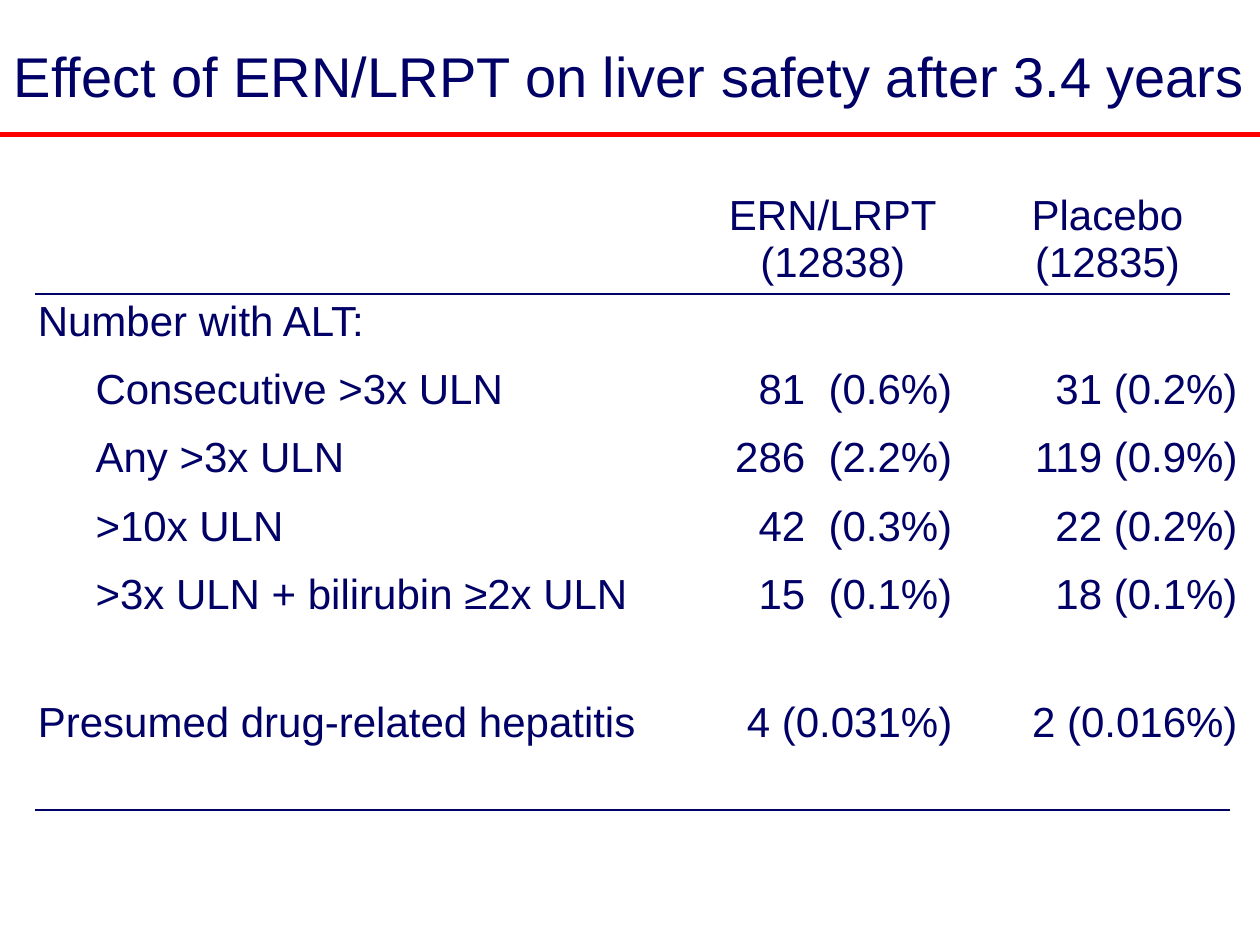
from dataclasses import dataclass

from lxml import etree
from pptx import Presentation
from pptx import util as u
from pptx.dml.color import RGBColor
from pptx.enum import shapes, text
from pptx.oxml.ns import qn

Pt = u.Pt
FONT = "Arial"
INK = {"navy": "000066", "red": "FF0000"}
LEFT, MID, RIGHT = text.PP_ALIGN.LEFT, text.PP_ALIGN.CENTER, text.PP_ALIGN.RIGHT
PAD, STEP = 7.2, 33


@dataclass
class Row:
    label: str = ""
    drug: str = ""
    sham: str = ""
    high: float = 39
    deep: bool = False


@dataclass
class Rule:
    left: float
    right: float
    top: float
    tint: str
    wide: float


ROWS = [
    Row("", "ERN/LRPT\n(12838)", "Placebo\n(12835)", 62.6),
    Row("Number with ALT:"),
    Row("Consecutive >3x ULN", "81  (0.6%)", "31 (0.2%)", deep=True),
    Row("Any >3x ULN", "286  (2.2%)", "119 (0.9%)", deep=True),
    Row(">10x ULN", "42  (0.3%)", "22 (0.2%)", deep=True),
    Row(">3x ULN + bilirubin ≥2x ULN", "15  (0.1%)", "18 (0.1%)", deep=True),
    Row(high=34),
    Row("Presumed drug-related hepatitis", "4 (0.031%)", "2 (0.016%)", 34),
    Row(high=29),
]
COLS = [368, 18, 113, 38, 163]
RULES = [
    Rule(0, 720, 77, "red", 3),
    Rule(20, 703, 168, "navy", 1),
    Rule(20, 703, 463, "navy", 1),
]


def style(frame, size: float, align) -> None:
    for para in frame.paragraphs:
        para.alignment = align
        for run in para.runs:
            font = run.font
            font.name, font.size, font.bold = FONT, Pt(size), False
            font.color.rgb = RGBColor.from_string(INK["navy"])


def add_title(slide, words: str) -> None:
    title = slide.shapes.title
    title.left, title.top = Pt(0), Pt(-2)
    title.width, title.height = Pt(720), Pt(90)
    frame = title.text_frame
    frame.text = words
    frame.auto_size = text.MSO_AUTO_SIZE.NONE
    frame.vertical_anchor = text.MSO_ANCHOR.MIDDLE
    style(frame, 32, MID)


def add_grid(slide, rows: list[Row]) -> None:
    high = sum(row.high for row in rows)
    grid = slide.shapes.add_table(
        len(rows), len(COLS), Pt(14.4), Pt(104.4), Pt(sum(COLS)), Pt(high)
    ).table
    grid.first_row = grid.horz_banding = False
    for col, wide in zip(grid.columns, COLS):
        col.width = Pt(wide)

    for i, row in enumerate(rows):
        grid.rows[i].height = Pt(row.high)
        for cell in grid.rows[i].cells:
            cell.fill.background()
        # The drug figures span two columns, except in the closing row
        if i < len(rows) - 1:
            grid.cell(i, 2).merge(grid.cell(i, 3))
        side = RIGHT if i else MID
        for j, words, align in (
            (0, row.label, LEFT), (2, row.drug, side), (4, row.sham, side)
        ):
            cell = grid.cell(i, j)
            cell.text_frame.text = words
            style(cell.text_frame, 24, align)
            if i == 0:
                cell.vertical_anchor = text.MSO_ANCHOR.BOTTOM
        if row.deep:
            grid.cell(i, 0).margin_left = Pt(PAD + STEP)


def add_rule(slide, rule: Rule) -> None:
    line = slide.shapes.add_connector(
        shapes.MSO_CONNECTOR.STRAIGHT,
        Pt(rule.left), Pt(rule.top), Pt(rule.right), Pt(rule.top),
    )
    line.line.color.rgb = RGBColor.from_string(INK[rule.tint])
    line.line.width = Pt(rule.wide)
    etree.SubElement(line._element.spPr, qn("a:effectLst"))


def main() -> None:
    deck = Presentation()
    deck.slide_width, deck.slide_height = Pt(720), Pt(540)
    slide = deck.slides.add_slide(deck.slide_layouts.get_by_name("Title Only"))

    # Title
    add_title(slide, "Effect of ERN/LRPT on liver safety after 3.4 years")
    # Results table
    add_grid(slide, ROWS)
    # Rules under the title and around the table body
    for rule in RULES:
        add_rule(slide, rule)

    deck.save("out.pptx")


if __name__ == "__main__":
    main()
